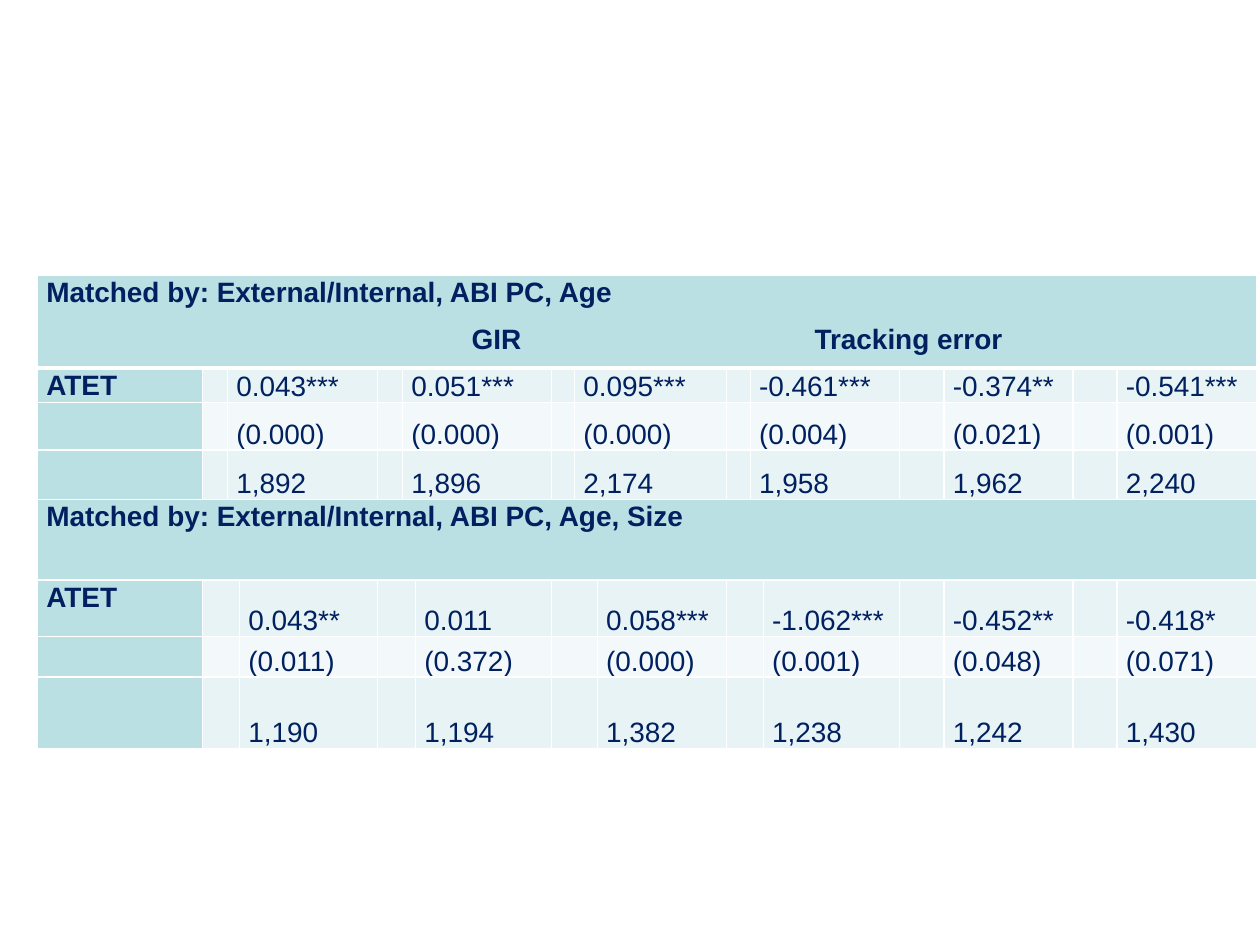
from dataclasses import dataclass

from lxml import etree
from pptx import Presentation
from pptx.dml.color import RGBColor
from pptx.enum.text import MSO_ANCHOR
from pptx.oxml.ns import qn
from pptx.util import Pt

TOP, BOTTOM = MSO_ANCHOR.TOP, MSO_ANCHOR.BOTTOM


@dataclass(frozen=True)
class Theme:
    font: str = "Arial"
    size: int = 16
    text: str = "002060"
    head: str = "BBE0E3"
    band_dark: str = "E7F3F4"
    band_light: str = "F3F9FA"
    border: str = "FFFFFF"


theme = Theme()

COLS = [94.3, 14.3, 6.9, 78.9, 14.3, 7.4, 77.7, 13.1, 13.1,
        73.7, 13.7, 7.4, 77.7, 25.7, 73.7, 25.1, 80]
ROWS = [53.3, 16.6, 27.4, 28.1, 46.1, 32.4, 23, 41]
OUTCOME_TABS = [243, 439]

# Each panel: heading row, heading lines, columns of the values, first columns
# of the two-column merges, rows of values
PANELS = [
    (0, ["Matched by: External/Internal, ABI PC, Age", "\tGIR\tTracking error"],
     [2, 5, 8, 11, 14, 16], [2, 5, 8, 11],
     [["0.043***", "0.051***", "0.095***", "-0.461***", "-0.374**", "-0.541***"],
      ["(0.000)", "(0.000)", "(0.000)", "(0.004)", "(0.021)", "(0.001)"],
      ["1,892", "1,896", "2,174", "1,958", "1,962", "2,240"]]),
    (4, ["Matched by: External/Internal, ABI PC, Age, Size"],
     [3, 6, 9, 12, 14, 16], [1, 4, 7, 10],
     [["0.043**", "0.011", "0.058***", "-1.062***", "-0.452**", "-0.418*"],
      ["(0.011)", "(0.372)", "(0.000)", "(0.001)", "(0.048)", "(0.071)"],
      ["1,190", "1,194", "1,382", "1,238", "1,242", "1,430"]]),
]


def write(cell, *lines, bold=False, anchor=TOP, tabs=()):
    cell.vertical_anchor = anchor
    tf = cell.text_frame
    for i, line in enumerate(lines):
        p = tf.add_paragraph() if i else tf.paragraphs[0]
        p.line_spacing, p.space_after = 1.07, Pt(8)
        if "\t" in line:
            tab_list = etree.SubElement(p._p.get_or_add_pPr(), qn("a:tabLst"))
            for pos in tabs:
                etree.SubElement(tab_list, qn("a:tab"), pos=str(Pt(pos)), algn="l")
        r = p.add_run()
        r.text = line
        r.font.name, r.font.size, r.font.bold = theme.font, Pt(theme.size), bold
        r.font.color.rgb = RGBColor.from_string(theme.text)


def style_cell(cell, fill, **widths):
    """Set fill, margins and the border widths given by side (L, R, T, B)."""
    tc_pr = cell._tc.get_or_add_tcPr()
    for side, width in widths.items():
        ln = etree.SubElement(tc_pr, qn(f"a:ln{side}"), w=str(Pt(width)))
        solid = etree.SubElement(ln, qn("a:solidFill"))
        etree.SubElement(solid, qn("a:srgbClr"), val=theme.border)
    cell.fill.solid()
    cell.fill.fore_color.rgb = RGBColor.from_string(fill)
    cell.margin_left = cell.margin_right = Pt(5)
    cell.margin_top = cell.margin_bottom = 0
    # Empty cells must not stretch the short rows
    end = cell.text_frame.paragraphs[0]._p.get_or_add_endParaRPr()
    end.set("sz", str(theme.size * 100))


prs = Presentation()
prs.slide_width, prs.slide_height = Pt(720), Pt(540)
s = prs.slides.add_slide(prs.slide_layouts[6])

frame = s.shapes.add_table(len(ROWS), len(COLS), Pt(21.5), Pt(157),
                           Pt(sum(COLS)), Pt(sum(ROWS)))
table = frame.table
table.first_row = table.horz_banding = False
for col, width in zip(table.columns, COLS):
    col.width = Pt(width)
for row, height in zip(table.rows, ROWS):
    row.height = Pt(height)

last = len(COLS) - 1
for top, heading, value_cols, merges, values in PANELS:
    for i in range(len(values) + 1):
        band = theme.band_dark if i % 2 else theme.band_light
        row = top + i
        for c in range(len(COLS)):
            fill = theme.head if i == 0 or c == 0 else band
            style_cell(table.cell(row, c), fill, L=1, R=1,
                       T=3 if row == 1 else 1, B=3 if row == 0 else 1)

    table.cell(top, 0).merge(table.cell(top, last))
    write(table.cell(top, 0), *heading, bold=True, tabs=OUTCOME_TABS)
    write(table.cell(top + 1, 0), "ATET", bold=True)
    for row, texts in enumerate(values, top + 1):
        for c in merges:
            table.cell(row, c).merge(table.cell(row, c + 1))
        for c, text in zip(value_cols, texts):
            write(table.cell(row, c), text, anchor=BOTTOM)

prs.save("out.pptx")
